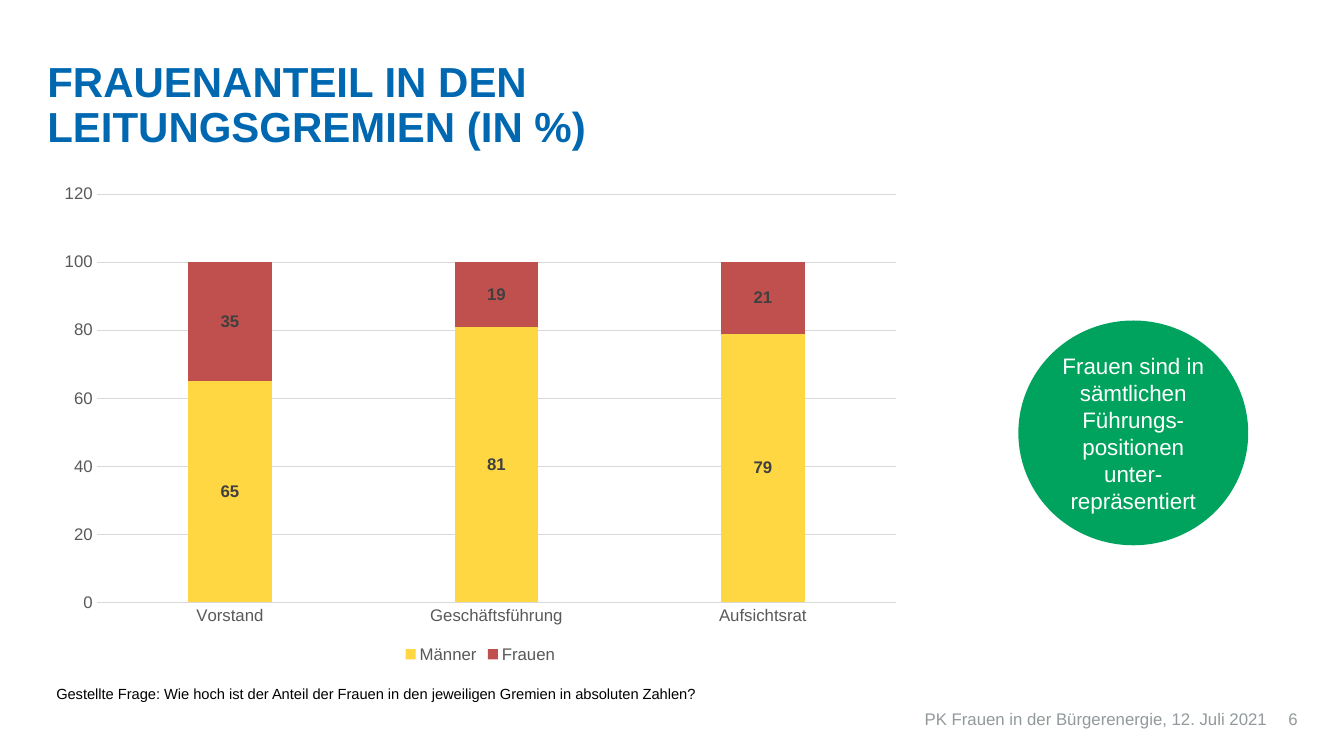
from pptx import Presentation
from pptx.chart.data import CategoryChartData
from pptx.dml.color import RGBColor
from pptx.enum.chart import XL_CHART_TYPE as Chart, XL_LEGEND_POSITION as Legend
from pptx.enum.chart import XL_LABEL_POSITION as Label, XL_TICK_MARK as Tick
from pptx.enum.shapes import MSO_SHAPE as Shape
from pptx.enum.text import MSO_ANCHOR as Anchor, PP_ALIGN as Align
from pptx.util import Inches, Pt

GREY, LINE, TEXT = "92999C", "D9D9D9", "595959"


def style(font, size, color, bold=False):
    font.name = "Arial"
    font.size = Pt(size)
    font.bold = bold
    font.color.rgb = RGBColor.from_string(color)


def add_text(box, text, size, color, align=Align.LEFT, anchor=Anchor.TOP,
             inset=None, bold=False):
    """Fill a shape with one styled paragraph and return the paragraph."""
    frame = box.text_frame
    frame.text = text
    frame.word_wrap = True
    frame.vertical_anchor = anchor
    if inset is not None:
        frame.margin_left = frame.margin_right = Inches(inset)
        frame.margin_top = frame.margin_bottom = Inches(inset)
    para = frame.paragraphs[0]
    para.alignment = align
    style(para.runs[0].font, size, color, bold)
    return para


prs = Presentation()
prs.slide_width, prs.slide_height = Inches(13.33), Inches(7.5)
slide = prs.slides.add_slide(prs.slide_layouts[6])
shapes = slide.shapes

# Footer
for left, width, text in [
    (7.28, 5.29, "PK Frauen in der Bürgerenergie, 12. Juli 2021"),
    (12.57, 0.3, "6"),
]:
    box = shapes.add_textbox(Inches(left), Inches(7.03), Inches(width), Inches(0.2))
    add_text(box, text, 12, GREY, Align.RIGHT, inset=0)

# Title
box = shapes.add_textbox(Inches(0.47), Inches(0.63), Inches(8.07), Inches(0.87))
title = add_text(box, "FRAUENANTEIL IN DEN LEITUNGSGREMIEN (IN %)", 30, "0067B1",
                 anchor=Anchor.BOTTOM, inset=0, bold=True)
title.line_spacing = Pt(32)

# Chart
data = CategoryChartData()
data.categories = ["Vorstand", "Geschäftsführung", "Aufsichtsrat"]
data.add_series("Männer", [65, 81, 79])
data.add_series("Frauen", [35, 19, 21])
chart = shapes.add_chart(Chart.COLUMN_STACKED, Inches(0.47), Inches(1.74),
                         Inches(8.59), Inches(4.88), data).chart
style(chart.font, 10, "000000")
chart.has_title = False
chart.has_legend = True
chart.legend.position = Legend.BOTTOM
chart.legend.include_in_layout = False
style(chart.legend.font, 12, TEXT)

cats, vals = chart.category_axis, chart.value_axis
for axis in (cats, vals):
    axis.major_tick_mark = axis.minor_tick_mark = Tick.NONE
    style(axis.tick_labels.font, 12, TEXT)
vals.minimum_scale, vals.maximum_scale, vals.major_unit = 0, 120, 20
vals.has_major_gridlines = True
vals.format.line.fill.background()
for line in (cats.format.line, vals.major_gridlines.format.line):
    line.color.rgb = RGBColor.from_string(LINE)
    line.width = Pt(0.75)

plot = chart.plots[0]
plot.vary_by_categories = False
plot.gap_width, plot.overlap = 219, 100
for series, color in zip(plot.series, ["FFD743", "C0504D"]):
    series.format.fill.solid()
    series.format.fill.fore_color.rgb = RGBColor.from_string(color)
    labels = series.data_labels
    labels.show_value = True
    labels.position = Label.CENTER
    style(labels.font, 12, "404040", True)

# Survey question
box = shapes.add_textbox(Inches(0.46), Inches(6.74), Inches(8.35), Inches(0.28))
add_text(box, "Gestellte Frage: Wie hoch ist der Anteil der Frauen in den jeweiligen "
         "Gremien in absoluten Zahlen?", 10.5, "000000")

# Key message
badge = shapes.add_shape(Shape.OVAL, Inches(10.1), Inches(3.18), Inches(2.28), Inches(2.23))
badge.shadow.inherit = False
badge.fill.solid()
badge.fill.fore_color.rgb = RGBColor.from_string("00A35D")
badge.line.fill.background()
add_text(badge, "Frauen sind in sämtlichen Führungs-positionen unter-repräsentiert",
         16, "FFFFFF", Align.CENTER, Anchor.MIDDLE)

prs.save("out.pptx")
